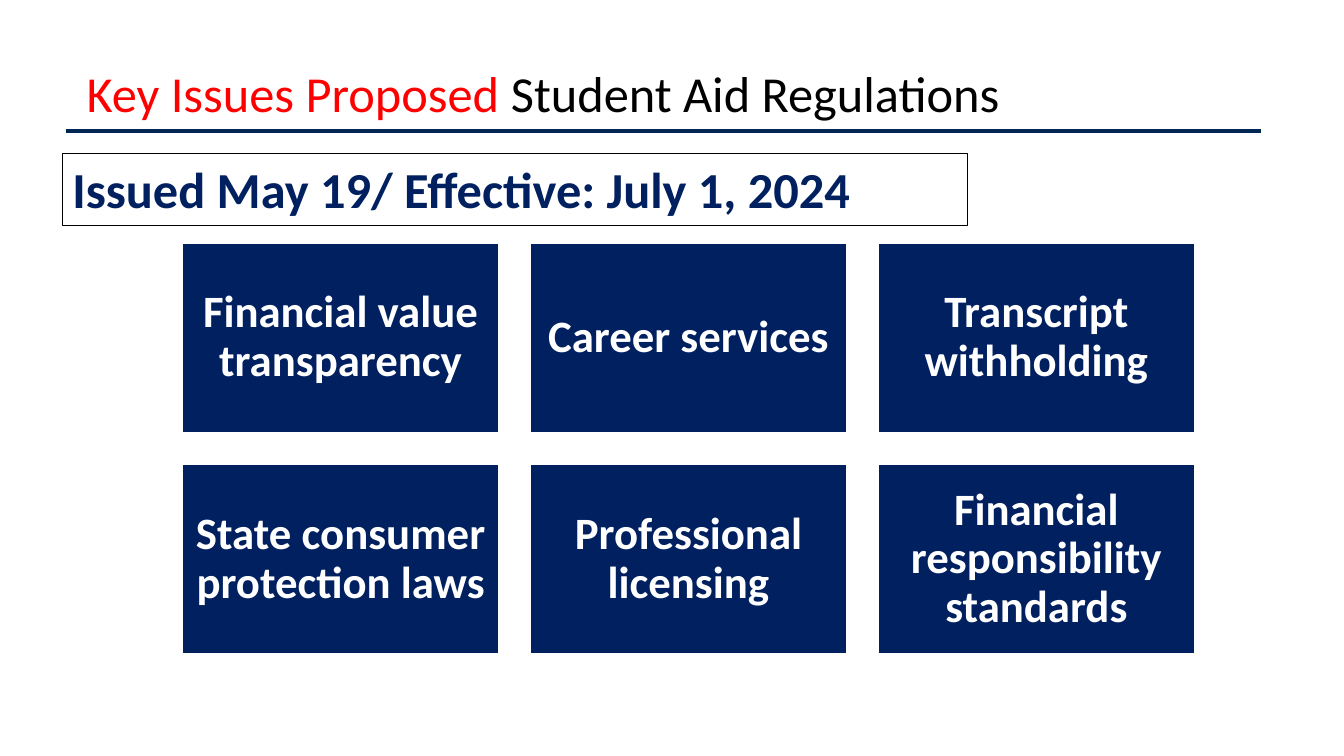
import pptx
import pptx.util
import pptx.dml.color
import pptx.enum.shapes
import pptx.enum.text
import lxml.etree
from pptx.util import Inches

NAVY = pptx.dml.color.RGBColor(0x00, 0x20, 0x60)
RULE_BLUE = pptx.dml.color.RGBColor(0x00, 0x26, 0x54)
RED = pptx.dml.color.RGBColor(0xFF, 0x00, 0x00)
BLACK = pptx.dml.color.RGBColor(0x00, 0x00, 0x00)
WHITE = pptx.dml.color.RGBColor(0xFF, 0xFF, 0xFF)
DRAWING_NS = "http://schemas.openxmlformats.org/drawingml/2006/main"
ALIGN = pptx.enum.text.PP_ALIGN
ANCHOR = pptx.enum.text.MSO_ANCHOR


def apply(target, values):
    for name, value in values.items():
        setattr(target, name, value)


class IssueSlide:
    font_name = "Calibri"
    heading_size = pptx.util.Pt(36)
    issue_size = pptx.util.Pt(32)

    def __init__(self, deck):
        self.slide = deck.slides.add_slide(deck.slide_layouts[6])

    def set_text(self, shape, runs, size, frame_format, paragraph_format, bold=False):
        frame = shape.text_frame
        apply(frame, {"word_wrap": True, "vertical_anchor": ANCHOR.MIDDLE, **frame_format})
        paragraph = frame.paragraphs[0]
        apply(paragraph, paragraph_format)
        for text, color in runs:
            run = paragraph.add_run()
            run.text = text
            apply(run.font, {"name": self.font_name, "size": size, "bold": bold})
            run.font.color.rgb = color

    def title(self, box, runs):
        heading = self.slide.shapes.add_textbox(*map(Inches, box))
        self.set_text(heading, runs, self.heading_size,
                      {"margin_left": Inches(0.21)}, {"line_spacing": 0.9})

    def rule(self, left, right, top):
        divider = self.slide.shapes.add_connector(
            pptx.enum.shapes.MSO_CONNECTOR.STRAIGHT,
            Inches(left), Inches(top), Inches(right), Inches(top))
        divider.line.color.rgb = RULE_BLUE
        divider.line.width = pptx.util.Pt(3)
        lxml.etree.SubElement(divider.element.spPr, f"{{{DRAWING_NS}}}effectLst")

    def rectangle(self, box, line_color, line_width):
        panel = self.slide.shapes.add_shape(
            pptx.enum.shapes.MSO_SHAPE.RECTANGLE, *map(Inches, box))
        panel.shadow.inherit = False
        panel.line.color.rgb = line_color
        panel.line.width = pptx.util.Pt(line_width)
        return panel

    def issue(self, box, text):
        tile = self.rectangle(box, WHITE, 1)
        tile.fill.solid()
        tile.fill.fore_color.rgb = NAVY
        sides = ("left", "top", "right", "bottom")
        self.set_text(tile, [(text, WHITE)], self.issue_size,
                      {f"margin_{side}": Inches(0.13) for side in sides},
                      {"alignment": ALIGN.CENTER, "line_spacing": 0.9}, bold=True)

    def dates(self, box, text):
        banner = self.rectangle(box, BLACK, 0.25)
        banner.fill.background()
        self.set_text(banner, [(text, NAVY)], self.heading_size,
                      {"vertical_anchor": ANCHOR.TOP},
                      {"alignment": ALIGN.LEFT}, bold=True)


def main():
    deck = pptx.Presentation()
    apply(deck, {"slide_width": Inches(13.33), "slide_height": Inches(7.5)})
    page = IssueSlide(deck)
    page.title((0.65, 0.51, 11.86, 0.88),
               [("Key Issues Proposed", RED), (" Student Aid Regulations", BLACK)])
    page.rule(0.65, 12.51, 1.3)
    issues = ["Financial value transparency", "Career services",
              "Transcript withholding", "State consumer protection laws",
              "Professional licensing", "Financial responsibility standards"]
    for index, text in enumerate(issues):
        row, column = divmod(index, 3)
        page.issue((1.81 + 3.45 * column, 2.41 + 2.2 * row, 3.14, 1.88), text)
    page.dates((0.62, 1.52, 8.97, 0.71), "Issued May 19/ Effective: July 1, 2024")
    deck.save("out.pptx")


if __name__ == "__main__":
    main()
